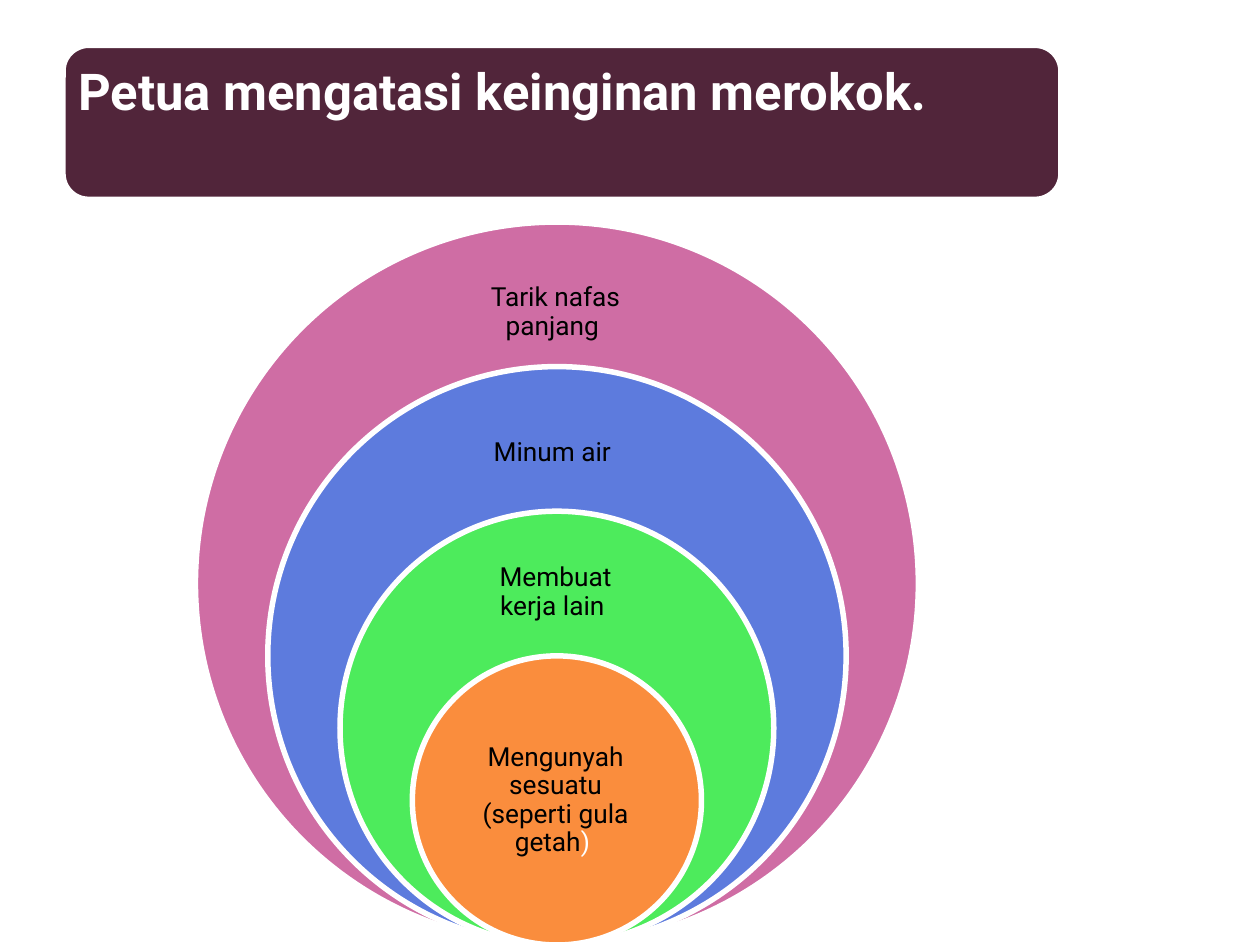
import pptx
import pptx.util
import pptx.dml.color
import pptx.enum.shapes
import pptx.enum.text
from dataclasses import dataclass

SHAPE = pptx.enum.shapes.MSO_SHAPE
ALIGN = pptx.enum.text.PP_ALIGN
ANCHOR = pptx.enum.text.MSO_ANCHOR


@dataclass(frozen=True)
class Theme:
    font: str = "Roboto"
    white: str = "FFFFFF"
    black: str = "000000"
    plum: str = "51253A"
    head: int = 29
    body: int = 15
    line: float = 3.15
    pad: float = 0.12


THEME = Theme()
WIDE, HIGH = 10, 7.5
MID = 0.442 * WIDE     # shared centre line of the rings
OUTER = 0.765 * HIGH   # diameter of the largest ring

# Fill, text runs with colours, then label top and height as shares of the ring.
RINGS = [
    ("CF6DA4", [("Tarik nafas panjang ", THEME.black)], 0.05, 0.15),
    ("5D7BDD", [("Minum air ", THEME.black)], 0.06, 0.18),
    ("4DEB5C", [("Membuat kerja lain ", THEME.black)], 0.075, 0.225),
    ("FA8D3D", [("Mengunyah sesuatu (seperti gula getah", THEME.black),
                (") ", THEME.white)], 0.25, 0.5),
]


def color(code):
    return pptx.dml.color.RGBColor.from_string(code)


def inches(*sizes):
    return [pptx.util.Inches(size) for size in sizes]


def add_form(slide, kind, box, fill):
    form = slide.shapes.add_shape(kind, *inches(*box))
    form.shadow.inherit = False
    form.fill.solid()
    form.fill.fore_color.rgb = color(fill)
    form.line.color.rgb = color(THEME.white)
    form.line.width = pptx.util.Pt(THEME.line)


def set_text(shape, parts, size, align, anchor, bold=False, top=THEME.pad):
    frame = shape.text_frame
    frame.word_wrap = True
    frame.auto_size = pptx.enum.text.MSO_AUTO_SIZE.NONE
    frame.vertical_anchor = anchor
    pad, = inches(THEME.pad)
    frame.margin_left = frame.margin_right = frame.margin_bottom = pad
    frame.margin_top, = inches(top)
    para = frame.paragraphs[0]
    para.alignment = align
    para.line_spacing = 0.9
    para.space_before = pptx.util.Pt(0)
    for text, code in parts:
        run = para.add_run()
        run.text = text
        run.font.name = THEME.font
        run.font.size = pptx.util.Pt(size)
        run.font.bold = bold
        run.font.color.rgb = color(code)


def add_title(slide, text):
    box = 0.05 * WIDE, 0.048 * HIGH, 0.792 * WIDE, 0.163 * HIGH
    add_form(slide, SHAPE.ROUNDED_RECTANGLE, box, THEME.plum)
    title = slide.shapes.title
    title.left, title.top, title.width, title.height = inches(*box)
    set_text(title, [(text, THEME.white)], THEME.head, ALIGN.LEFT,
             ANCHOR.TOP, bold=True, top=0.17)
    # Bring the title in front of its panel.
    slide.shapes._spTree.append(title._element)


def add_ring(slide, share, fill, parts, drop, depth):
    """Draw a circle that rests on the slide's bottom edge, and its label."""
    size = OUTER * share
    top = HIGH - size
    add_form(slide, SHAPE.OVAL, (MID - size / 2, top, size, size), fill)
    width = 0.16 * WIDE
    label = slide.shapes.add_textbox(
        *inches(MID - 0.01 - width / 2, top + drop * size, width, depth * size))
    set_text(label, parts, THEME.body, ALIGN.CENTER, ANCHOR.MIDDLE)


def main():
    deck = pptx.Presentation()
    deck.slide_width, deck.slide_height = inches(WIDE, HIGH)
    slide = deck.slides.add_slide(deck.slide_layouts[5])
    add_title(slide, "Petua mengatasi keinginan merokok.")
    for index, ring in enumerate(RINGS):
        add_ring(slide, 1 - 0.2 * index, *ring)
    deck.save("out.pptx")


if __name__ == "__main__":
    main()
